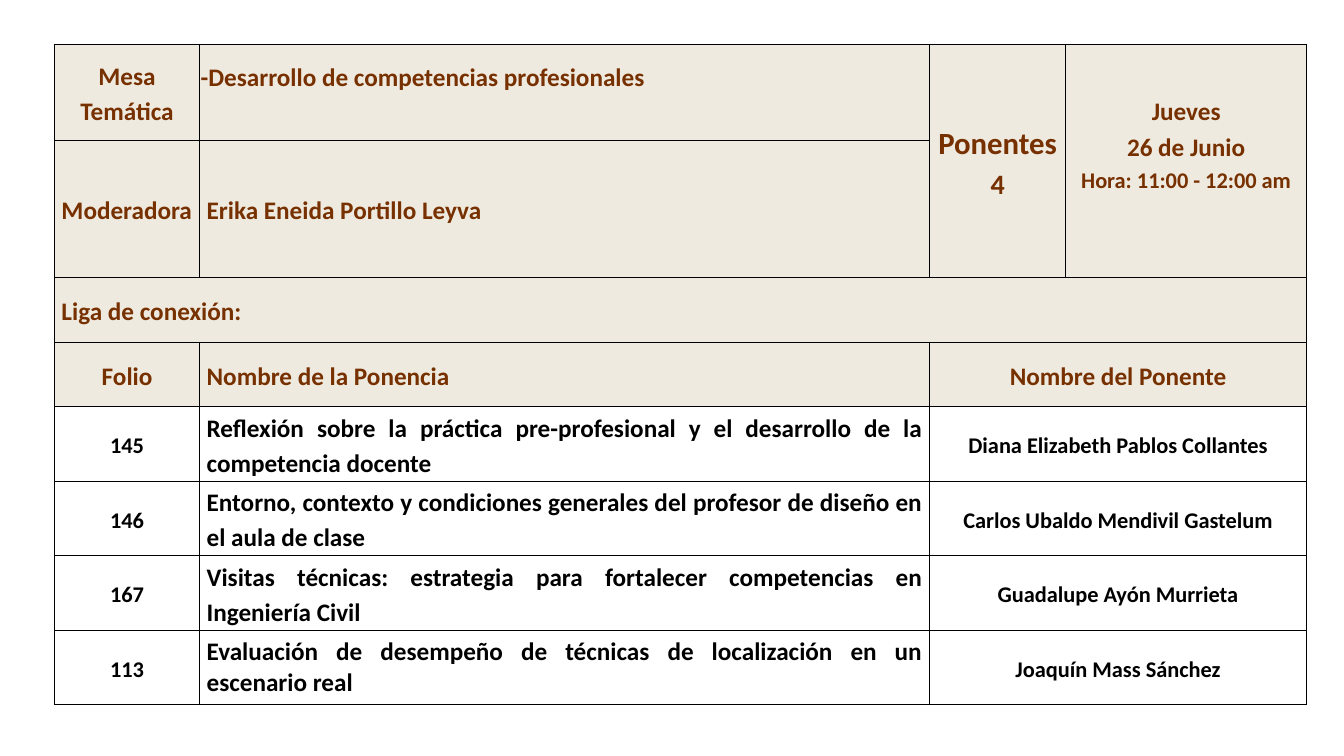
from lxml.etree import SubElement
from pptx import Presentation
from pptx.dml.color import RGBColor
from pptx.enum.text import MSO_ANCHOR, PP_ALIGN
from pptx.oxml.ns import qn
from pptx.util import Inches, Pt

WIDE, HIGH = 13.33, 7.5
COLS = [1.44, 7.24, 1.35, 2.39]
ROWS = [0.95, 1.36] + [0.64] * 2 + [0.74] * 4
BROWN, BLACK, SAND, WHITE = "773000", "000000", "EFEADF", "FFFFFF"
MID, JUST = PP_ALIGN.CENTER, PP_ALIGN.JUSTIFY

TALKS = [
    ("145", "Reflexión sobre la práctica pre-profesional y el desarrollo de la competencia docente",
     "Diana Elizabeth Pablos Collantes", 1.14),
    ("146", "Entorno, contexto y condiciones generales del profesor de diseño en el aula de clase",
     "Carlos Ubaldo Mendivil Gastelum", 1.14),
    ("167", "Visitas técnicas: estrategia para fortalecer competencias en Ingeniería Civil",
     "Guadalupe Ayón Murrieta", 1.14),
    ("113", "Evaluación de desempeño de técnicas de localización en un escenario real",
     "Joaquín Mass Sánchez", 1),
]


def paint(code):
    return RGBColor.from_string(code)


def edge(cell):
    """Draw a thin black line on all four sides, ahead of the fill."""
    props = cell._tc.get_or_add_tcPr()
    for spot, side in enumerate(("lnL", "lnR", "lnT", "lnB")):
        line = SubElement(props, qn(f"a:{side}"), w=str(Pt(1)))
        fill = SubElement(line, qn("a:solidFill"))
        SubElement(fill, qn("a:srgbClr"), val=BLACK)
        props.insert(spot, line)


def build_grid(slide):
    frame = slide.shapes.add_table(
        len(ROWS), len(COLS), Inches(0.54), Inches(0.44),
        Inches(sum(COLS)), Inches(sum(ROWS)))
    grid = frame.table
    grid.first_row = grid.horz_banding = False
    for col, width in zip(grid.columns, COLS):
        col.width = Inches(width)
    for row, height in zip(grid.rows, ROWS):
        row.height = Inches(height)
    for r in range(len(ROWS)):
        for c in range(len(COLS)):
            cell = grid.cell(r, c)
            cell.fill.solid()
            cell.fill.fore_color.rgb = paint(SAND if r < 4 else WHITE)
            edge(cell)
    return grid


def write(grid, row, col, lines, align=MID, tint=BROWN, space=1.15, end=None):
    """Fill a cell with (text, size) lines; end is the last cell of a merge."""
    cell = grid.cell(row, col)
    if end:
        cell.merge(grid.cell(*end))
    cell.vertical_anchor = MSO_ANCHOR.MIDDLE
    cell.margin_left = cell.margin_right = Inches(0.07)
    cell.margin_top = cell.margin_bottom = 0
    frame = cell.text_frame
    for i, (text, size) in enumerate(lines):
        para = frame.add_paragraph() if i else frame.paragraphs[0]
        para.text = text
        para.alignment = align
        para.line_spacing = space
        para.font.name = "Calibri"
        para.font.size = Pt(size)
        para.font.bold = True
        para.font.color.rgb = paint(tint)
    return cell


def main():
    deck = Presentation()
    deck.slide_width, deck.slide_height = Inches(WIDE), Inches(HIGH)
    grid = build_grid(deck.slides.add_slide(deck.slide_layouts[6]))

    # Session details
    write(grid, 0, 0, [("Mesa Temática", 18)])
    topic = write(grid, 0, 1, [("-Desarrollo de competencias profesionales", 18)],
                  JUST, space=1)
    topic.margin_left = topic.margin_right = topic.margin_top = Inches(0.01)
    # The topic sits above the middle of its row
    topic.margin_bottom = Inches(0.29)
    write(grid, 0, 2, [("Ponentes", 22), ("4", 20)], end=(1, 2))
    date = write(grid, 0, 3, [("Jueves", 18), ("26 de Junio", 18),
                              ("Hora: 11:00 - 12:00 am", 16)], end=(1, 3))
    date.margin_bottom = Inches(0.35)
    # A slim right margin keeps the label on one line
    label = write(grid, 1, 0, [("Moderadora", 18)], JUST)
    label.margin_right = Inches(0.02)
    write(grid, 1, 1, [("Erika Eneida Portillo Leyva", 18)], JUST)
    write(grid, 2, 0, [("Liga de conexión:", 18)], JUST, end=(2, 3))

    # Column heads
    write(grid, 3, 0, [("Folio", 18)])
    write(grid, 3, 1, [("Nombre de la Ponencia", 18)], JUST)
    write(grid, 3, 2, [("Nombre del Ponente", 18)], end=(3, 3))

    # Talks
    for row, (folio, title, name, space) in enumerate(TALKS, 4):
        write(grid, row, 0, [(folio, 16)], MID, BLACK, 1.14)
        write(grid, row, 1, [(title, 18)], JUST, BLACK, space)
        write(grid, row, 2, [(name, 16)], MID, BLACK, 1.14, (row, 3))

    deck.save("out.pptx")


if __name__ == "__main__":
    main()
